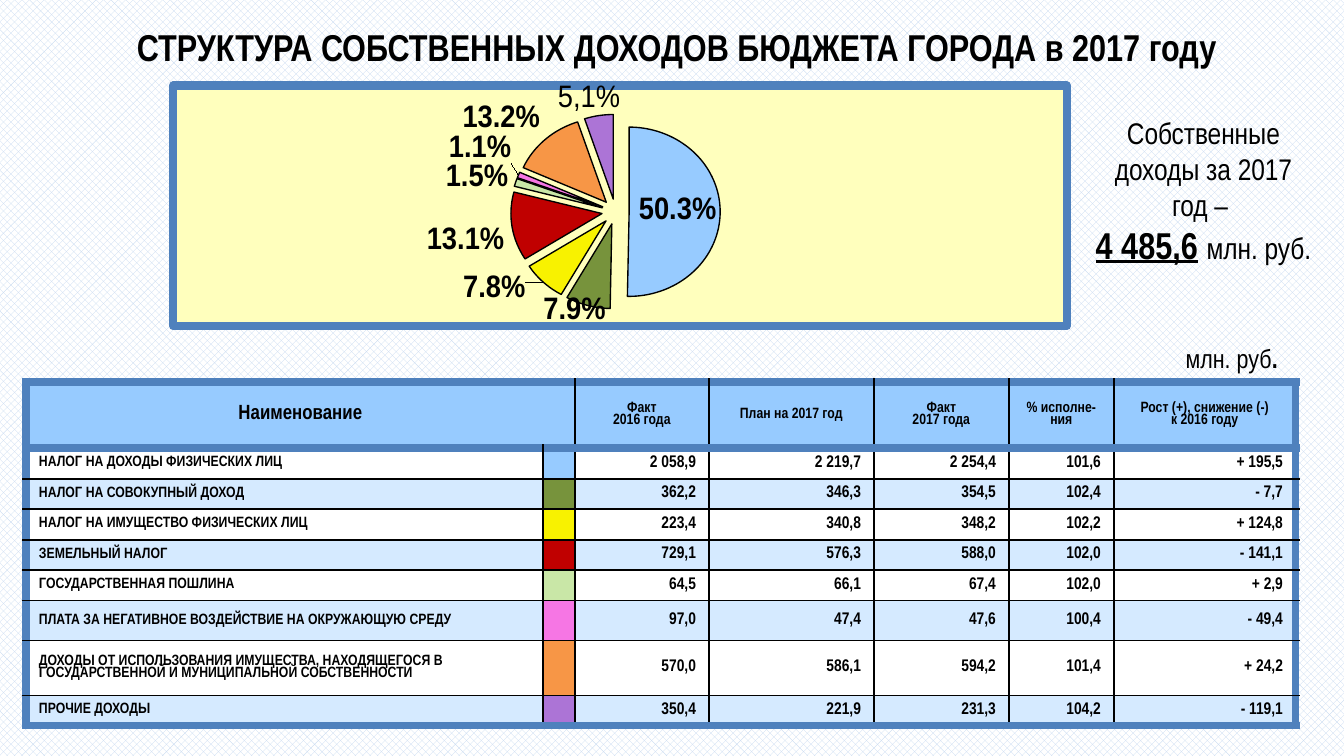
"""Build the slide on the structure of the city's own budget revenue in 2017."""
from lxml import etree
from pptx import Presentation
from pptx.chart.data import CategoryChartData
from pptx.dml.color import RGBColor as RGB
from pptx.enum.chart import XL_CHART_TYPE as CT, XL_LABEL_POSITION as LP
from pptx.enum.dml import MSO_PATTERN as PAT
from pptx.enum.text import MSO_ANCHOR as ANC, PP_ALIGN as AL
from pptx.oxml import parse_xml
from pptx.oxml.ns import nsdecls, qn
from pptx.util import Pt

PX = 914400 / 134.4
FONT = "Arial Narrow"
C = {"black": "000000", "white": "FFFFFF", "frame": "4F81BD", "cream": "FFFFBD",
     "head": "97CBFF", "band": "D5EAFF", "check": "C6D9F1"}


def px(*vals):
    return [round(v * PX) for v in vals]


def add_run(p, text, size, bold=False, underline=None):
    r = p.add_run()
    r.text = text
    r.font.name, r.font.size, r.font.bold, r.font.underline = FONT, Pt(size), bold, underline
    r.font.color.rgb = RGB.from_string(C["black"])


prs = Presentation()
prs.slide_width, prs.slide_height = px(1344, 756)
s = prs.slides.add_slide(prs.slide_layouts[6])
bg = s.background.fill
bg.patterned()
bg.pattern = PAT.LARGE_CHECKER_BOARD
bg.fore_color.rgb = RGB.from_string(C["check"])
bg.back_color.rgb = RGB.from_string(C["white"])

rows = [
    ("НАЛОГ НА ДОХОДЫ ФИЗИЧЕСКИХ ЛИЦ", "97CBFF", 50.3, "2 058,9", "2 219,7", "2 254,4", "101,6", "+ 195,5"),
    ("НАЛОГ НА СОВОКУПНЫЙ ДОХОД", "77933C", 7.9, "362,2", "346,3", "354,5", "102,4", "- 7,7"),
    ("НАЛОГ НА ИМУЩЕСТВО ФИЗИЧЕСКИХ ЛИЦ", "F8F200", 7.8, "223,4", "340,8", "348,2", "102,2", "+ 124,8"),
    ("ЗЕМЕЛЬНЫЙ НАЛОГ", "C00000", 13.1, "729,1", "576,3", "588,0", "102,0", "- 141,1"),
    ("ГОСУДАРСТВЕННАЯ ПОШЛИНА", "C9E7A7", 1.5, "64,5", "66,1", "67,4", "102,0", "+ 2,9"),
    ("ПЛАТА ЗА НЕГАТИВНОЕ ВОЗДЕЙСТВИЕ НА ОКРУЖАЮЩУЮ СРЕДУ", "F676E4", 1.1,
     "97,0", "47,4", "47,6", "100,4", "- 49,4"),
    ("ДОХОДЫ ОТ ИСПОЛЬЗОВАНИЯ ИМУЩЕСТВА, НАХОДЯЩЕГОСЯ В ГОСУДАРСТВЕННОЙ И МУНИЦИПАЛЬНОЙ СОБСТВЕННОСТИ",
     "F79646", 13.2, "570,0", "586,1", "594,2", "101,4", "+ 24,2"),
    ("ПРОЧИЕ ДОХОДЫ", "AC74D6", 5.1, "350,4", "221,9", "231,3", "104,2", "- 119,1"),
]
header = ["Наименование", "", "Факт\n2016 года", "План на 2017 год", "Факт\n2017 года",
          "% исполне-ния", "Рост (+), снижение (-)\nк 2016 году"]
grid = [header] + [[row[0], "", *row[3:]] for row in rows]
widths = px(517, 32, 134, 165, 135, 105, 182)
heights = px(66, 31, 30, 31, 30, 31, 40, 55, 30)

tbl = s.shapes.add_table(len(heights), len(widths), *px(26, 382, 1270, 344)).table
for col, w in zip(tbl.columns, widths):
    col.width = w
for row, h in zip(tbl.rows, heights):
    row.height = h
last_row, last_col = len(heights) - 1, len(widths) - 1
for i, texts in enumerate(grid):
    for j, text in enumerate(texts):
        cell = tbl.cell(i, j)
        cell.vertical_anchor = ANC.MIDDLE
        cell.margin_left = cell.margin_right = px(13)[0]
        cell.margin_top = cell.margin_bottom = px(1 if i and not j else 5)[0]
        fill = C["head"] if i == 0 else rows[i - 1][1] if j == 1 else C["white" if i % 2 else "band"]
        cell.fill.solid()
        cell.fill.fore_color.rgb = RGB.from_string(fill)
        thick = {"L": j == 0, "R": j == last_col, "T": i < 2, "B": i in (0, last_row)}
        for n, (side, outer) in enumerate(thick.items()):
            color, width = (C["frame"], 4.5) if outer else (C["black"], 1)
            cell._tc.get_or_add_tcPr().insert(n, parse_xml(
                f'<a:ln{side} {nsdecls("a")} w="{Pt(width)}"><a:solidFill>'
                f'<a:srgbClr val="{color}"/></a:solidFill></a:ln{side}>'))
        tf = cell.text_frame
        for k, line in enumerate(text.split("\n")):
            p = tf.add_paragraph() if k else tf.paragraphs[0]
            p.alignment = AL.CENTER if i == 0 else AL.RIGHT if j > 1 else AL.LEFT
            p.line_spacing = 0.8
            if line:
                add_run(p, line, 11 if i + j == 0 else 9 if i and j else 8, True)
            else:
                etree.SubElement(p._p, qn("a:endParaRPr"), sz="800")
tbl.cell(0, 0).merge(tbl.cell(0, 1))

captions = [
    ((27, 13, 1300, 58), ANC.MIDDLE, AL.CENTER, 1.2,
     [[("СТРУКТУРА СОБСТВЕННЫХ ДОХОДОВ БЮДЖЕТА ГОРОДА в 2017 году", 20, True)]]),
    ((1082, 108, 243, 168), ANC.TOP, AL.CENTER, 1.0,
     [[("Собственные доходы за 2017 год – ", 16)],
      [("4 485,6", 20, True, True), (" ", 20, True), ("млн. руб.", 16)]]),
    ((1095, 336, 196, 46), ANC.TOP, AL.RIGHT, 1.0, [[("млн. руб", 14), (".", 14, True)]]),
]
for box, anchor, align, spacing, paras in captions:
    tf = s.shapes.add_textbox(*px(*box)).text_frame
    tf.word_wrap = True
    tf.vertical_anchor = anchor
    for k, runs in enumerate(paras):
        p = tf.add_paragraph() if k else tf.paragraphs[0]
        p.alignment, p.line_spacing = align, spacing
        for run in runs:
            add_run(p, *run)

data = CategoryChartData()
data.categories = [str(n + 1) for n in range(len(rows))]
data.add_series("Series 1", [row[2] for row in rows])
chart = s.shapes.add_chart(CT.PIE, *px(169, 80, 902, 261), data).chart
chart.has_title = chart.has_legend = False
chart.font.name, chart.font.size = FONT, Pt(18)
chart.font.color.rgb = RGB.from_string(C["black"])
plot = chart.plots[0]
plot.vary_by_categories = True
ser = plot.series[0]
ser.format.line.width = Pt(0.75)
ser._element.find(qn("c:spPr")).addnext(parse_xml(f'<c:explosion {nsdecls("c")} val="15"/>'))
for n, row in enumerate(rows):
    fmt = ser.points[n].format
    fmt.fill.solid()
    fmt.fill.fore_color.rgb = RGB.from_string(row[1])
    fmt.line.color.rgb = RGB.from_string(C["black"])
    fmt.line.width = Pt(0.75)
dl = ser.data_labels
dl.show_percentage, dl.show_value = True, False
dl.number_format, dl.number_format_is_linked = "0.0%", False
dl.position = LP.BEST_FIT
dl.font.name, dl.font.size, dl.font.bold = FONT, Pt(18), True
other = ser.points[len(rows) - 1].data_label
add_run(other.text_frame.paragraphs[0], "5,1%", 18)
other.position = LP.BEST_FIT

area = chart._chartSpace.chart.plotArea
for old in area.findall(qn("c:layout")):
    area.remove(old)
place = "".join(f'<c:{k} val="{v}"/>' for k, v in
                [("layoutTarget", "inner"), ("xMode", "edge"), ("yMode", "edge"),
                 ("x", 0), ("y", 0.12), ("w", 0.99), ("h", 0.81)])
area.insert(0, parse_xml(f'<c:layout {nsdecls("c")}><c:manualLayout>{place}</c:manualLayout></c:layout>'))
cream = f'<a:solidFill><a:srgbClr val="{C["cream"]}"/></a:solidFill>'
frame = (f'<a:ln w="{Pt(4.5)}"><a:solidFill><a:srgbClr val="{C["frame"]}"/></a:solidFill>'
         '<a:round/></a:ln>')
area.append(parse_xml(f'<c:spPr {nsdecls("c", "a")}>{cream}</c:spPr>'))
chart._chartSpace.chart.addnext(parse_xml(f'<c:spPr {nsdecls("c", "a")}>{cream}{frame}</c:spPr>'))

prs.save("out.pptx")
